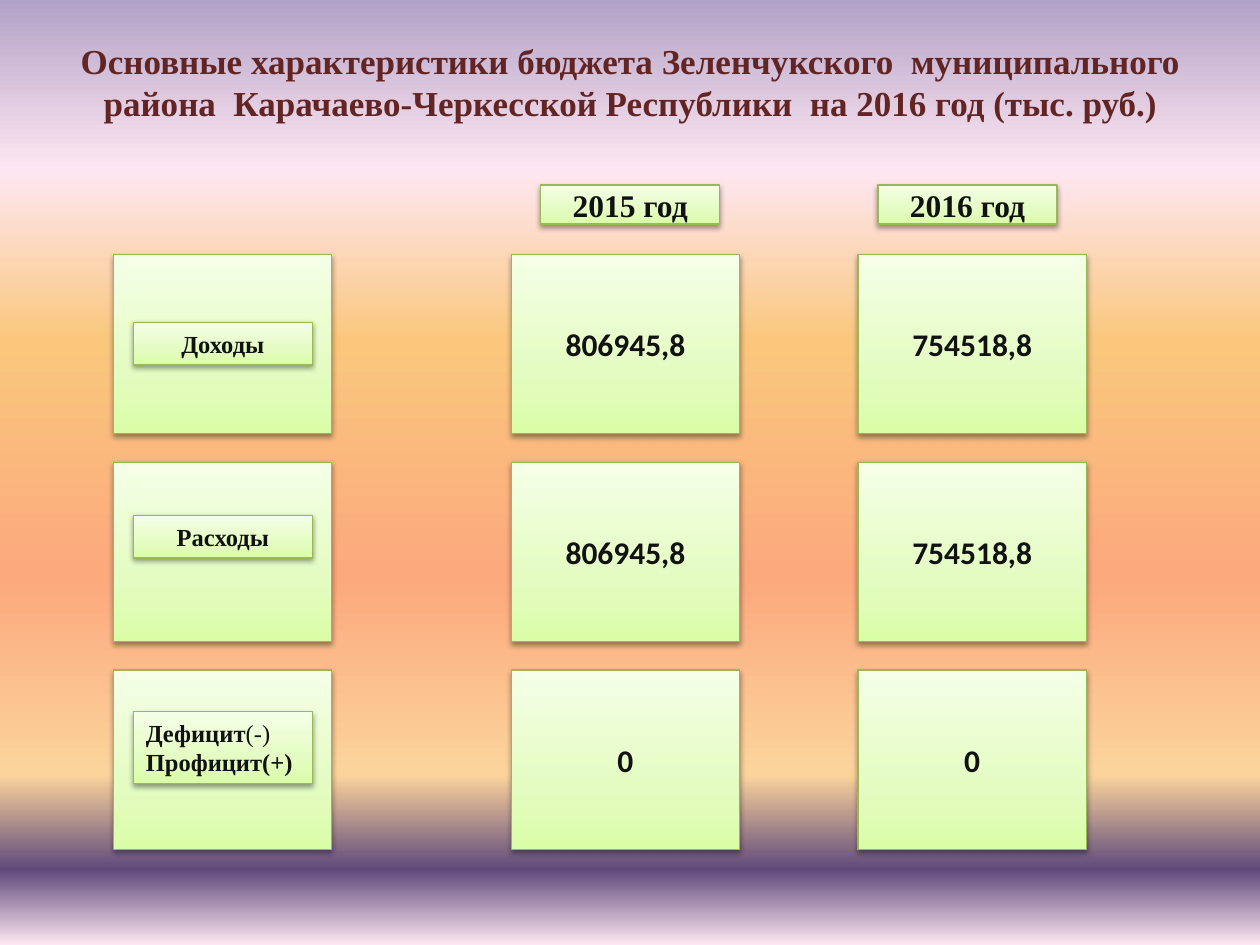
from lxml import etree
from pptx import Presentation
from pptx.dml.color import RGBColor
from pptx.enum.shapes import MSO_SHAPE
from pptx.enum.text import MSO_ANCHOR, MSO_AUTO_SIZE, PP_ALIGN
from pptx.oxml.ns import qn
from pptx.util import Cm, Pt

RECT = MSO_SHAPE.RECTANGLE
LEFT, MID = PP_ALIGN.LEFT, PP_ALIGN.CENTER
TOP, CORE = MSO_ANCHOR.TOP, MSO_ANCHOR.MIDDLE
FIXED = MSO_AUTO_SIZE.NONE

INK = RGBColor(0x11, 0x11, 0x11)
WINE = RGBColor(0x63, 0x25, 0x23)
EDGE = RGBColor(0x98, 0xB9, 0x55)
BLACK = RGBColor(0, 0, 0)
LIME = [(0, RGBColor(0xDA, 0xFD, 0xA7)), (35, RGBColor(0xE4, 0xFC, 0xC2)),
        (100, RGBColor(0xF5, 0xFF, 0xE7))]
SUNSET = [(0, RGBColor(0xB3, 0xA2, 0xC7)), (18, RGBColor(0xFE, 0xE7, 0xF2)),
          (36, RGBColor(0xFA, 0xC7, 0x7D)), (61, RGBColor(0xFB, 0xA9, 0x7D)),
          (82, RGBColor(0xFB, 0xD4, 0x9C)), (92, RGBColor(0x60, 0x4A, 0x7B)),
          (100, RGBColor(0xFE, 0xE7, 0xF2))]
SERIF, SANS = "Times New Roman", "Calibri"

TITLE = ("Основные характеристики бюджета Зеленчукского  муниципального "
         "района  Карачаево-Черкесской Республики  на 2016 год (тыс. руб.)")
# year, left of its tag, left of its column, values from top to bottom
YEARS = [
    ("2015 год", 10.9, 10.31, ["806945,8", "806945,8", "0"]),
    ("2016 год", 17.7, 17.3, ["754518,8", "754518,8", "0"]),
]
# runs of (text, bold), top, height, alignment
LABELS = [
    ([("Доходы", True)], 6.5, 0.86, MID),
    ([("Расходы", True)], 10.39, 0.86, MID),
    ([("Дефицит", True), ("(-) ", False), ("Профицит(+)", True)],
     14.35, 1.45, LEFT),
]
ROW_TOP, ROW_STEP, ROW_HIGH = 5.13, 4.19, 3.61
HEAD_LEFT, HEAD_WIDE, CELL_WIDE = 2.29, 4.4, 4.6
TAG_LEFT, TAG_WIDE = 2.69, 3.61
YEAR_TOP, YEAR_HIGH = 3.73, 0.79


def grade(fill, root, stops, angle):
    """Give fill, found under root, any number of gradient stops."""
    fill.gradient()
    fill.gradient_angle = angle
    group = root.find(".//" + qn("a:gsLst"))
    for old in list(group):
        group.remove(old)
    for place, color in stops:
        stop = etree.SubElement(group, qn("a:gs"), pos=str(place * 1000))
        etree.SubElement(stop, qn("a:srgbClr"), val=str(color))


def shade(shape):
    """Add a soft shadow below the shape."""
    shape.shadow.inherit = False
    group = shape._element.spPr.find(qn("a:effectLst"))
    soft = etree.SubElement(group, qn("a:outerShdw"), blurRad="40000",
                            dist="20000", dir="5400000", rotWithShape="0")
    color = etree.SubElement(soft, qn("a:srgbClr"), val=str(BLACK))
    etree.SubElement(color, qn("a:alpha"), val="38000")


def write(shape, runs, font=SERIF, size=18, color=INK, align=MID,
          anchor=CORE, wrap=False):
    frame = shape.text_frame
    frame.word_wrap = wrap
    frame.auto_size = FIXED
    frame.vertical_anchor = anchor
    para = frame.paragraphs[0]
    para.alignment = align
    for text, bold in runs:
        run = para.add_run()
        run.text = text
        run.font.name, run.font.size = font, Pt(size)
        run.font.bold = bold
        run.font.color.rgb = color


def panel(slide, *box):
    shape = slide.shapes.add_shape(RECT, *map(Cm, box))
    grade(shape.fill, shape._element.spPr, LIME, 90)
    shape.line.color.rgb = EDGE
    shape.line.width = Pt(0.75)
    shade(shape)
    return shape


def main():
    deck = Presentation()
    deck.slide_width, deck.slide_height = Cm(25.4), Cm(19.05)
    slide = deck.slides.add_slide(deck.slide_layouts[5])
    grade(slide.background.fill, slide._element, SUNSET, 270)

    title = slide.shapes.title
    title.left, title.top = Cm(1.32), Cm(0.66)
    title.width, title.height = Cm(22.78), Cm(1.96)
    write(title, [(TITLE, True)], size=20, color=WINE, anchor=TOP, wrap=True)

    rows = [ROW_TOP + i * ROW_STEP for i in range(len(LABELS))]
    for top, (runs, tag_top, high, align) in zip(rows, LABELS):
        panel(slide, HEAD_LEFT, top, HEAD_WIDE, ROW_HIGH)
        tag = panel(slide, TAG_LEFT, tag_top, TAG_WIDE, high)
        write(tag, runs, size=14, align=align, anchor=TOP, wrap=True)

    for year, tag_left, left, values in YEARS:
        tag = panel(slide, tag_left, YEAR_TOP, TAG_WIDE, YEAR_HIGH)
        write(tag, [(year, True)])
        for top, value in zip(rows, values):
            cell = panel(slide, left, top, CELL_WIDE, ROW_HIGH)
            write(cell, [(value, True)], font=SANS)

    deck.save("out.pptx")


if __name__ == "__main__":
    main()
